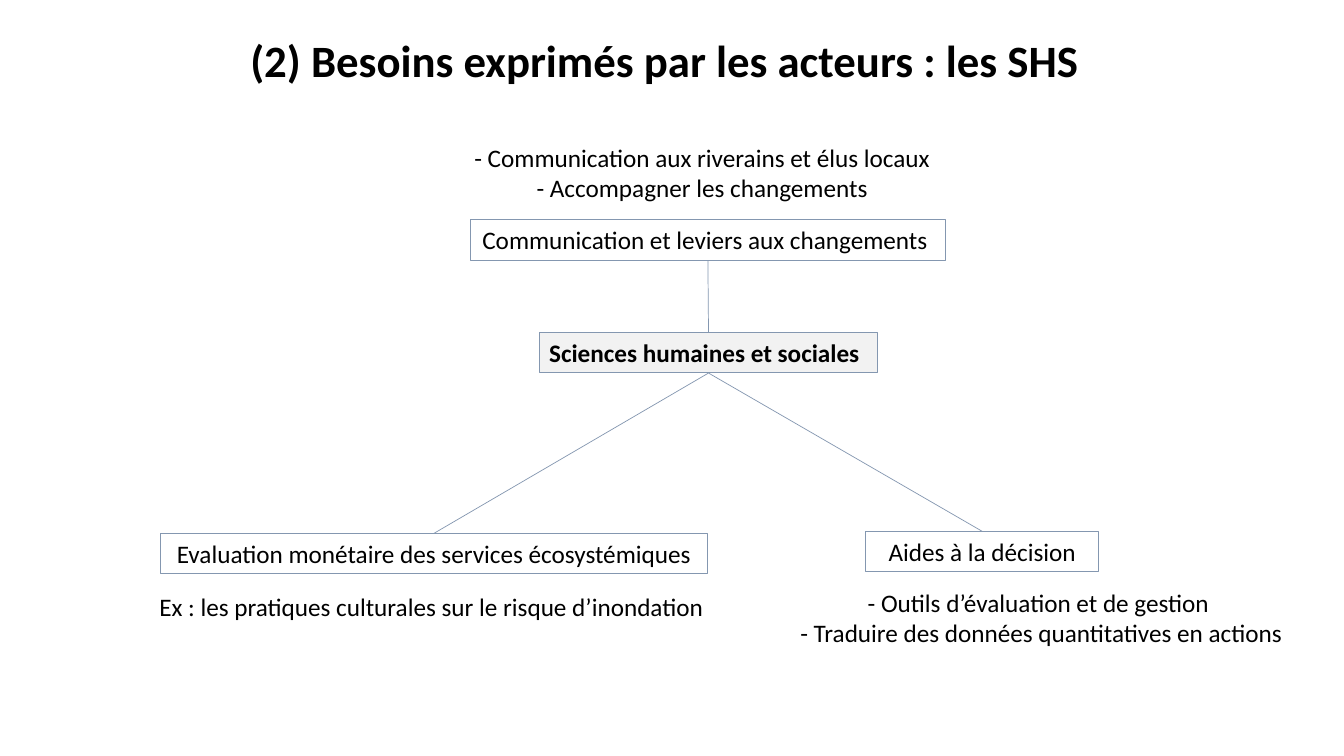
from lxml import etree
from pptx import Presentation
from pptx.dml.color import RGBColor
from pptx.enum.shapes import MSO_CONNECTOR, MSO_SHAPE
from pptx.enum.text import MSO_ANCHOR, PP_ALIGN
from pptx.oxml.ns import qn
from pptx.util import Cm, Pt

RECT = MSO_SHAPE.RECTANGLE
STRAIGHT = MSO_CONNECTOR.STRAIGHT
TOP = MSO_ANCHOR.TOP
LEFT, CENTER = PP_ALIGN.LEFT, PP_ALIGN.CENTER
ABOVE, BELOW = 0, 2


def color(code):
    return RGBColor.from_string(code)


class Board:
    font = "Calibri"
    ink = "000000"
    edge = "8497B0"

    def __init__(self, slide):
        self.shapes = slide.shapes

    def label(self, shape, lines, align=CENTER, size=18, bold=False):
        frame = shape.text_frame
        frame.word_wrap = True
        frame.vertical_anchor = TOP
        frame.text = "\n".join(lines)
        style = {"name": self.font, "size": Pt(size), "bold": bold}
        for para in frame.paragraphs:
            para.alignment = align
            for run in para.runs:
                for key, value in style.items():
                    setattr(run.font, key, value)
                run.font.color.rgb = color(self.ink)

    def text(self, area, *lines, **style):
        shape = self.shapes.add_textbox(*map(Cm, area))
        self.label(shape, lines, **style)

    def box(self, area, line, fill=None, **style):
        shape = self.shapes.add_shape(RECT, *map(Cm, area))
        shape.shadow.inherit = False
        if fill:
            shape.fill.solid()
            shape.fill.fore_color.rgb = color(fill)
        else:
            shape.fill.background()
        shape.line.color.rgb = color(self.edge)
        shape.line.width = Pt(0.75)
        self.label(shape, [line], **style)
        return shape

    def link(self, start, side, end, port):
        line = self.shapes.add_connector(STRAIGHT, 0, 0, 0, 0)
        line.begin_connect(start, side)
        line.end_connect(end, port)
        line.line.color.rgb = color(self.edge)
        line.line.width = Pt(0.5)
        etree.SubElement(line._element.spPr, qn("a:effectLst"))


def main():
    deck = Presentation()
    deck.slide_width, deck.slide_height = Cm(33.87), Cm(19.05)
    board = Board(deck.slides.add_slide(deck.slide_layouts[6]))
    high, tall = 1.02, 1.8

    board.text((-0.18, 0.71, 33.87, 1.63),
               "(2) Besoins exprimés par les acteurs : les SHS",
               size=32, bold=True)

    core = board.box((13.59, 8.38, 8.53, high), "Sciences humaines et sociales",
                     fill="F2F2F2", align=LEFT, bold=True)
    change = board.box((11.86, 5.54, 11.96, high),
                       "Communication et leviers aux changements ")
    choice = board.box((21.82, 13.39, 5.87, high), "Aides à la décision")
    value = board.box((4.04, 13.44, 13.79, high),
                      "Evaluation monétaire des services écosystémiques")

    board.link(change, BELOW, core, ABOVE)
    for leaf in (choice, value):
        board.link(leaf, ABOVE, core, BELOW)

    board.text((11.56, 3.45, 12.27, tall),
               "- Communication aux riverains et élus locaux",
               "- Accompagner les changements")
    board.text((3.68, 14.78, 14.53, high),
               "Ex : les pratiques culturales sur le risque d’inondation ")
    board.text((19.51, 14.68, 13.46, tall),
               "- Outils d’évaluation et de gestion ",
               "- Traduire des données quantitatives en actions")

    deck.save("out.pptx")


if __name__ == "__main__":
    main()
